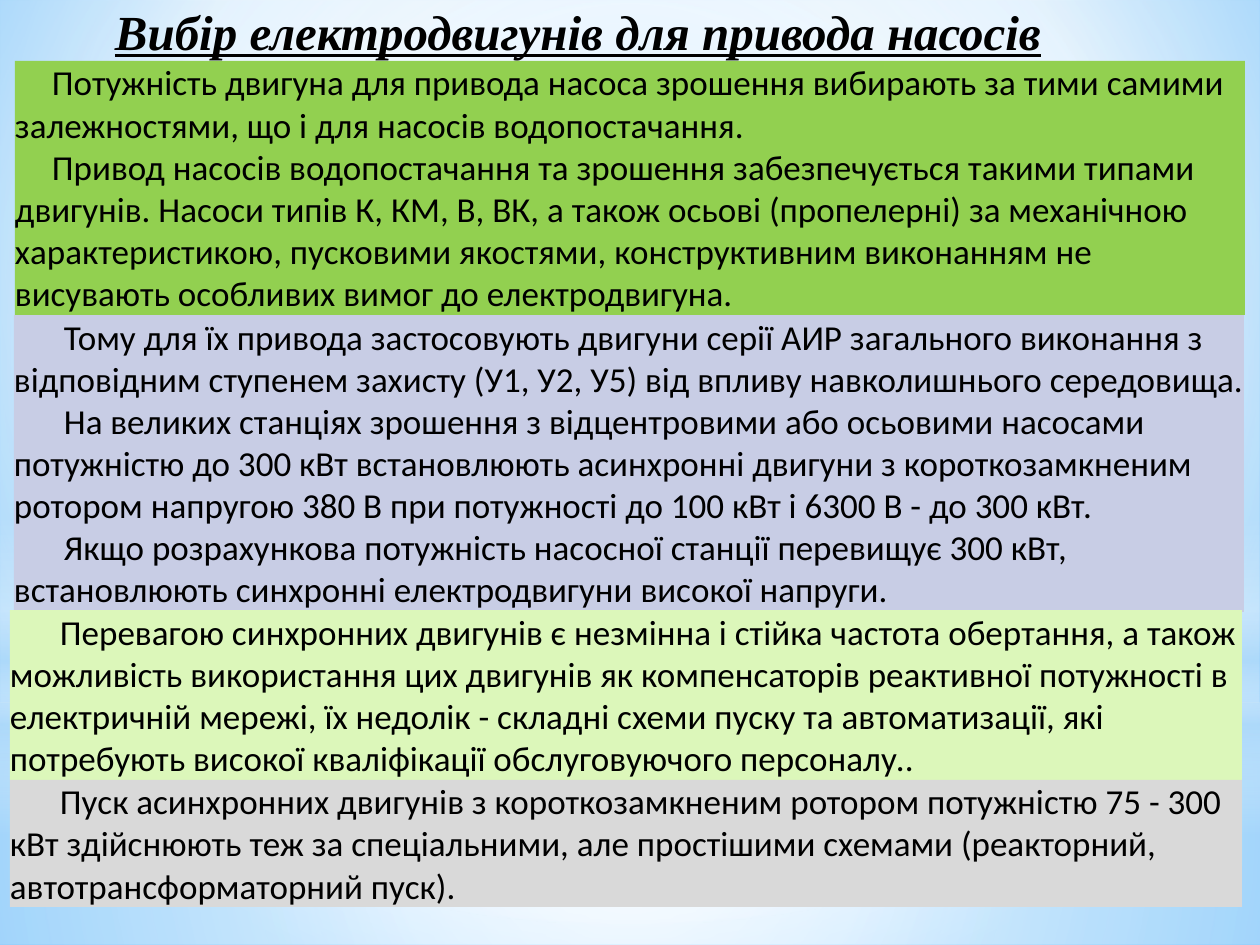
from pptx import Presentation
from pptx.dml.color import RGBColor as RGB
from pptx.enum.shapes import MSO_SHAPE as SHAPE
from pptx.enum.text import MSO_ANCHOR as ANCHOR, MSO_AUTO_SIZE as FIT, PP_ALIGN as ALIGN
from pptx.oxml import parse_xml
from pptx.oxml.ns import nsdecls, qn
from pptx.util import Emu, Pt

PX = 914400 / 126
COLORS = {"black": "000000", "white": "FFFFFF", "pale": "B4DCFA", "sky": "9ED5FF", "blue": "5BB9FF",
          "green": "92D050", "lavender": "C8CDE5", "lime": "DCF7BA", "gray": "D9D9D9"}
TITLE_FONT = {"name": "Times New Roman", "size": Pt(28), "bold": True, "italic": True, "underline": True}
BODY_FONT = {"name": "Calibri", "size": Pt(20)}
CENTER = (50, 50, 50, 50)

GLOWS = [
    (SHAPE.RECTANGLE, (0, 703, 1260, 242), [(0, "white", 91), (37, "white", 76), (100, "pale", 79)], CENTER),
    (SHAPE.RECTANGLE, (0, 0, 1260, 703), [(0, "white", 89), (48, "white", 62), (100, "pale", 79)], CENTER),
    (SHAPE.RECTANGLE, (0, 519, 1260, 315), [(0, "white", 0), (29, "white", 30), (45, "pale", 40),
                                            (55, "white", 26), (65, "pale", 60), (100, "white", 0)], None),
    (SHAPE.OVAL, (0, 220, 1260, 703), [(0, "white", 100), (56, "white", 0)], CENTER),
]
BLOCKS = [
    ((15, 61, 1230, 254), "green", 37, [
        "Потужність двигуна для привода насоса зрошення вибирають за тими самими залежностями, що і для насосів водопостачання.",
        "Привод насосів водопостачання та зрошення забезпечується такими типами двигунів. Насоси типів К, КМ, В, ВК, а також осьові (пропелерні) за механічною характеристикою, пусковими якостями, конструктивним виконанням не висувають особливих вимог до електродвигуна."]),
    ((14, 315, 1230, 297), "lavender", 50, [
        "Тому для їх привода застосовують двигуни серії АИР загального виконання з відповідним ступенем захисту (У1, У2, У5) від впливу навколишнього середовища.",
        "На великих станціях зрошення з відцентровими або осьовими насосами потужністю до 300 кВт встановлюють асинхронні двигуни з короткозамкненим ротором напругою 380 В при потужності до 100 кВт і 6300 В - до 300 кВт.",
        "Якщо розрахункова потужність насосної станції перевищує 300 кВт, встановлюють синхронні електродвигуни високої напруги."]),
    ((10, 610, 1232, 170), "lime", 50, [
        "Перевагою синхронних двигунів є незмінна і стійка частота обертання, а також можливість використання цих двигунів як компенсаторів реактивної потужності в електричній мережі, їх недолік - складні схеми пуску та автоматизації, які потребують високої кваліфікації обслуговуючого персоналу.."]),
    ((10, 780, 1232, 127), "gray", 50, [
        "Пуск асинхронних двигунів з короткозамкненим ротором потужністю 75 - 300 кВт здійснюють теж за спеціальними, але простішими схемами (реакторний, автотрансформаторний пуск)."]),
]


def emu(box):
    """Turn px lengths into EMU."""
    return [Emu(round(v * PX)) for v in box]


def set_attrs(obj, values):
    """Set each named attribute of an object."""
    for name, value in values.items():
        setattr(obj, name, value)


def add_gradient(owner, fill, stops, focus):
    """Give a fill colour stops, radial round a focus or else vertical."""
    fill.gradient()
    old = owner.find(".//" + qn("a:gradFill"))
    gs = "".join(f'<a:gs pos="{pos * 1000}"><a:srgbClr val="{COLORS[c]}"><a:alpha val="{alpha * 1000}"/>'
                 f'</a:srgbClr></a:gs>' for pos, c, alpha in stops)
    if focus:
        sides = " ".join(f'{side}="{v * 1000}"' for side, v in zip("ltrb", focus))
        shade = f'<a:path path="circle"><a:fillToRect {sides}/></a:path>'
    else:
        shade = '<a:lin ang="5400000" scaled="0"/>'
    old.getparent().replace(old, parse_xml(
        f'<a:gradFill {nsdecls("a")} rotWithShape="1"><a:gsLst>{gs}</a:gsLst>{shade}</a:gradFill>'))


def add_plain_shape(s, kind, box):
    """Add a shape without line or shadow."""
    sp = s.shapes.add_shape(kind, *emu(box))
    sp.shadow.inherit = False
    sp.line.fill.background()
    return sp


def add_backdrop(s):
    """Fill the background and lay the soft glows over it."""
    add_gradient(s._element, s.background.fill, [(0, "sky", 100), (60, "white", 100), (100, "blue", 100)],
                 (20, 10, 20, 60))
    for kind, box, stops, focus in GLOWS:
        sp = add_plain_shape(s, kind, box)
        add_gradient(sp._element, sp.fill, stops, focus)


def write_text(sp, texts, font, indent=0, wrap=True):
    """Write left-aligned paragraphs with a first-line indent."""
    tf = sp.text_frame
    set_attrs(tf, {"margin_left": 0, "margin_top": 0, "margin_right": 0, "margin_bottom": 0,
                   "word_wrap": wrap, "auto_size": FIT.SHAPE_TO_FIT_TEXT, "vertical_anchor": ANCHOR.TOP})
    for i, text in enumerate(texts):
        p = tf.paragraphs[0] if i == 0 else tf.add_paragraph()
        p.alignment = ALIGN.LEFT
        pPr = p._p.get_or_add_pPr()
        pPr.set("marL", "0")
        pPr.set("indent", str(round(indent * PX)))
        r = p.add_run()
        r.text = text
        set_attrs(r.font, font)
        r.font.color.rgb = RGB.from_string(COLORS["black"])


def add_title(s, box, text):
    """Place the title placeholder above the backdrop."""
    sp = s.shapes.title
    set_attrs(sp, dict(zip(("left", "top", "width", "height"), emu(box))))
    write_text(sp, [text], TITLE_FONT, wrap=False)
    s.shapes._spTree.append(sp._element)


def add_block(s, box, color, indent, texts):
    """Add a coloured block of body text."""
    sp = add_plain_shape(s, SHAPE.RECTANGLE, box)
    sp.fill.solid()
    sp.fill.fore_color.rgb = RGB.from_string(COLORS[color])
    write_text(sp, texts, BODY_FONT, indent)


def main():
    """Build the slide and save it."""
    prs = Presentation()
    prs.slide_width, prs.slide_height = emu((1260, 945))
    s = prs.slides.add_slide(prs.slide_layouts[5])
    add_backdrop(s)
    add_title(s, (115, 1, 936, 59), "Вибір електродвигунів для привода насосів")
    for block in BLOCKS:
        add_block(s, *block)
    prs.save("out.pptx")


if __name__ == "__main__":
    main()
